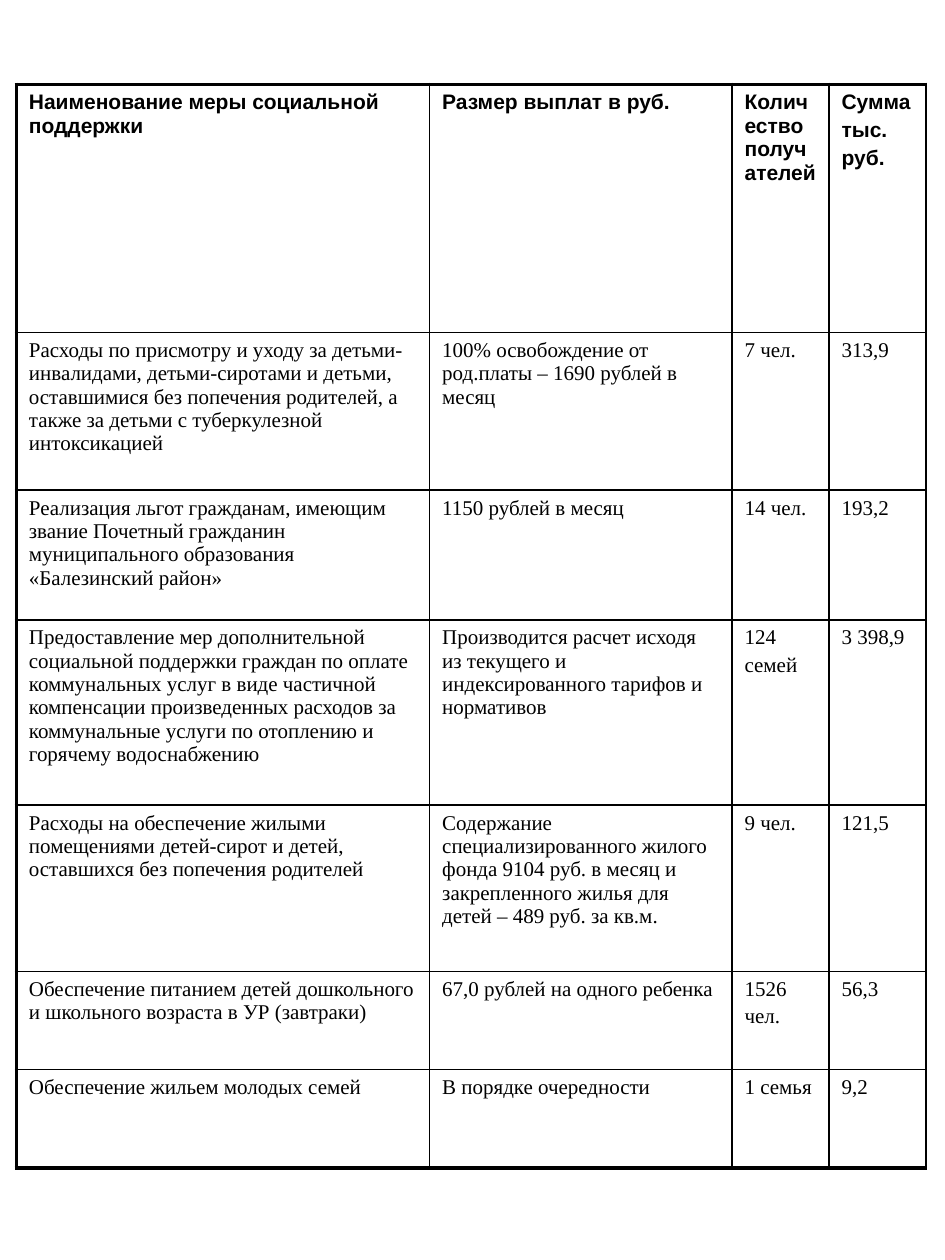
"""Builds a slide with a table of social support measures."""
from typing import NamedTuple

from lxml import etree
from pptx import Presentation
from pptx import util as u
from pptx.dml import color
from pptx.oxml import ns

HUES = {"ink": "000000", "page": "FFFFFF"}
THIN, THICK = 1, 2.25
COLS = [3.28, 2.4, 0.77, 0.77]


class Row(NamedTuple):
    """One table row: its height and its four texts."""
    high: float
    name: str
    rate: str
    count: str
    sum: str


class Look(NamedTuple):
    """Font of a row."""
    font: str
    bold: bool


HEAD = Look("Arial", True)
BODY = Look("Times New Roman", False)

ROWS = [
    Row(1.97, "Наименование меры социальной поддержки", "Размер выплат в руб.",
        "Количество получателей", "Сумма\nтыс.\nруб."),
    Row(1.25, "Расходы по присмотру и уходу за детьми-инвалидами, детьми-сиротами и детьми, "
        "оставшимися без попечения родителей, а также за детьми с туберкулезной интоксикацией",
        "100% освобождение от род.платы – 1690 рублей в месяц", "7 чел.", "313,9"),
    Row(1.03, "Реализация льгот гражданам, имеющим звание Почетный гражданин "
        "муниципального образования «Балезинский район»",
        "1150 рублей в месяц", "14 чел.", "193,2"),
    Row(1.47, "Предоставление мер дополнительной социальной поддержки граждан по оплате "
        "коммунальных услуг в виде частичной компенсации произведенных расходов за "
        "коммунальные услуги по отоплению и горячему водоснабжению",
        "Производится расчет исходя из текущего и индексированного тарифов и нормативов",
        "124\nсемей", "3 398,9"),
    Row(1.32, "Расходы на обеспечение жилыми помещениями детей-сирот и детей, "
        "оставшихся без попечения родителей",
        "Содержание специализированного жилого фонда 9104 руб. в месяц и закрепленного "
        "жилья для детей – 489 руб. за кв.м.", "9 чел.", "121,5"),
    Row(0.78, "Обеспечение питанием детей дошкольного и школьного возраста в УР (завтраки)",
        "67,0 рублей на одного ребенка", "1526\nчел.", "56,3"),
    Row(0.78, "Обеспечение жильем молодых семей", "В порядке очередности", "1 семья", "9,2"),
]


def edge(cell, side: str, width: float) -> None:
    """Draw one border of a cell."""
    props = cell._tc.get_or_add_tcPr()
    line = etree.SubElement(props, ns.qn(f"a:ln{side}"), w=str(u.Pt(width)))
    fill = etree.SubElement(line, ns.qn("a:solidFill"))
    etree.SubElement(fill, ns.qn("a:srgbClr"), val=HUES["ink"])


def write(cell, words: str, look: Look) -> None:
    """Fill a cell with one paragraph per line of words."""
    frame = cell.text_frame
    for i, line in enumerate(words.split("\n")):
        para = frame.add_paragraph() if i else frame.paragraphs[0]
        para.space_before = u.Pt(2.4)
        run = para.add_run()
        run.text = line
        font = run.font
        font.name, font.size, font.bold = look.font, u.Pt(12), look.bold
        font.color.rgb = color.RGBColor.from_string(HUES["ink"])


def main() -> None:
    """Build and save the deck."""
    deck = Presentation()
    deck.slide_width, deck.slide_height = u.Inches(7.5), u.Inches(10)
    slide = deck.slides.add_slide(deck.slide_layouts[6])
    table = slide.shapes.add_table(
        len(ROWS), len(COLS), u.Inches(0.13), u.Inches(0.67),
        u.Inches(sum(COLS)), u.Inches(sum(row.high for row in ROWS))).table
    table.first_row = table.horz_banding = False
    for col, wide in zip(table.columns, COLS):
        col.width = u.Inches(wide)
    last = len(ROWS) - 1
    for r, row in enumerate(ROWS):
        table.rows[r].height = u.Inches(row.high)
        for c, words in enumerate(row[1:]):
            cell = table.cell(r, c)
            edge(cell, "L", THIN if c else THICK)
            edge(cell, "R", THIN)
            edge(cell, "T", THIN if r else THICK)
            edge(cell, "B", THICK if r == last else THIN)
            cell.fill.solid()
            cell.fill.fore_color.rgb = color.RGBColor.from_string(HUES["page"])
            write(cell, words, BODY if r else HEAD)
    deck.save("out.pptx")


if __name__ == "__main__":
    main()
